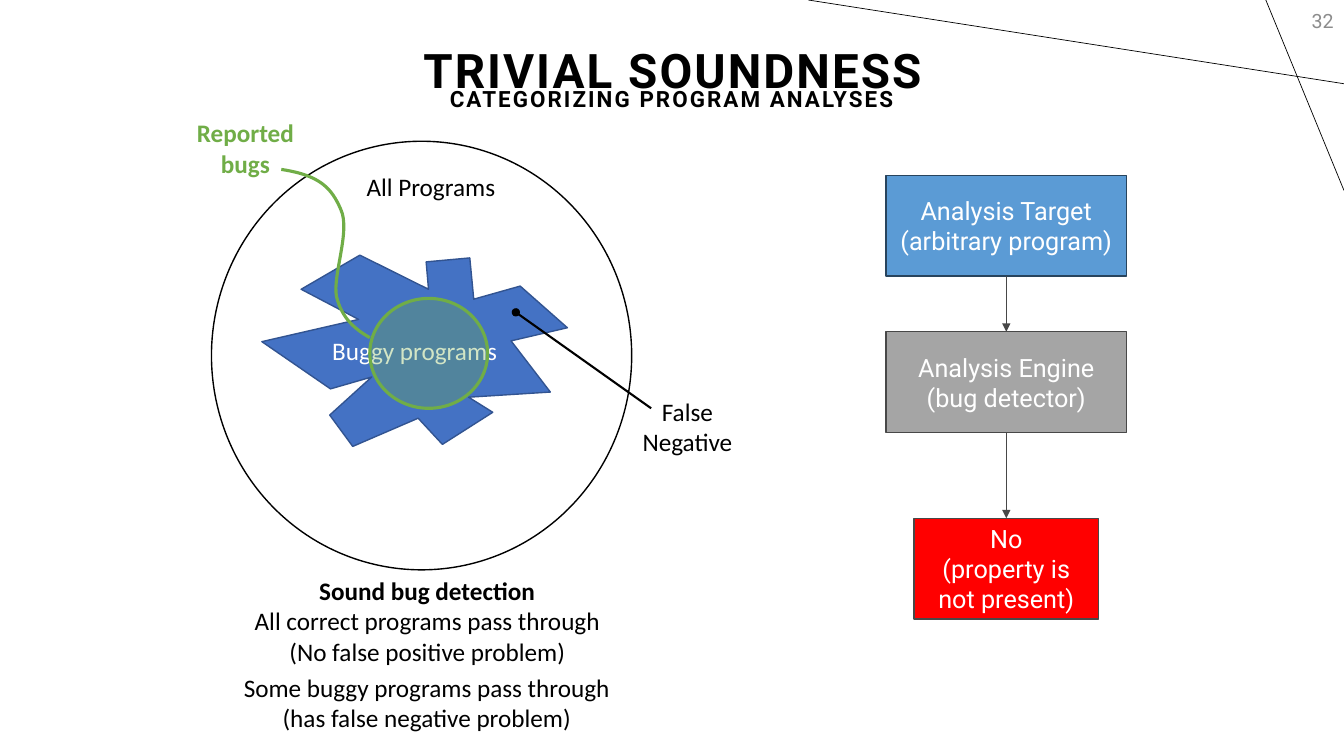
from pptx import Presentation
from pptx.dml.color import RGBColor
from pptx.enum.shapes import MSO_CONNECTOR, MSO_SHAPE
from pptx.enum.text import MSO_ANCHOR, MSO_AUTO_SIZE, PP_ALIGN
from pptx.oxml.ns import qn
from pptx.util import Cm, Pt
from lxml import etree

RECT, OVAL = MSO_SHAPE.RECTANGLE, MSO_SHAPE.OVAL
STRAIGHT = MSO_CONNECTOR.STRAIGHT
CENTER, RIGHT = PP_ALIGN.CENTER, PP_ALIGN.RIGHT
TOP, MIDDLE = MSO_ANCHOR.TOP, MSO_ANCHOR.MIDDLE
FIT = MSO_AUTO_SIZE.SHAPE_TO_FIT_TEXT
BOTTOM_SIDE, TOP_SIDE = 2, 0

BLACK = RGBColor(0x00, 0x00, 0x00)
WHITE = RGBColor(0xFF, 0xFF, 0xFF)
PAGE_GRAY = RGBColor(0x8C, 0x8C, 0x8C)
GREEN = RGBColor(0x70, 0xAD, 0x47)
BLUE = RGBColor(0x44, 0x72, 0xC4)
BLUE_EDGE = RGBColor(0x32, 0x54, 0x91)
SKY = RGBColor(0x5B, 0x9B, 0xD5)
SKY_EDGE = RGBColor(0x28, 0x44, 0x5D)
GRAY = RGBColor(0xA5, 0xA5, 0xA5)
DARK = RGBColor(0x48, 0x48, 0x48)
RED = RGBColor(0xFF, 0x00, 0x00)


class SlideBuilder:
    heading_font = "Roboto"
    body_font = "Calibri"
    size = 18

    def __init__(self, slide):
        self.s = slide

    def add_lines(self, tf, lines, color, font, size=None, bold=False,
                  align=CENTER, anchor=TOP, spc=None, spacing=None):
        tf.vertical_anchor = anchor
        for i, line in enumerate(lines):
            p = tf.add_paragraph() if i else tf.paragraphs[0]
            p.alignment = align
            if spacing:
                p.line_spacing = spacing
            r = p.add_run()
            r.text = line
            r.font.name = font
            r.font.size = Pt(size or self.size)
            r.font.bold = bold
            r.font.color.rgb = color
            if spc:
                r._r.get_or_add_rPr().set("spc", str(spc))

    def textbox(self, box, lines, color=BLACK, font=body_font, wrap=False, **style):
        tf = self.s.shapes.add_textbox(*map(Cm, box)).text_frame
        tf.word_wrap = wrap
        if not wrap:
            tf.auto_size = FIT
        self.add_lines(tf, lines, color, font, **style)

    def heading(self, box, text, size):
        self.textbox(box, [text], font=self.heading_font, wrap=True, size=size,
                     bold=True, anchor=MIDDLE, spc=150, spacing=0.9)

    def paint(self, sp, fill, edge, width=1.0, alpha=None):
        sp.shadow.inherit = False
        if fill is None:
            sp.fill.background()
        else:
            sp.fill.solid()
            sp.fill.fore_color.rgb = fill
        if alpha:
            clr = sp._element.spPr.find(qn("a:solidFill"))[0]
            etree.SubElement(clr, qn("a:alpha")).set("val", str(alpha * 1000))
        sp.line.color.rgb = edge
        sp.line.width = Pt(width)
        return sp

    def shape(self, kind, box, fill, edge, **look):
        sp = self.s.shapes.add_shape(kind, *map(Cm, box))
        return self.paint(sp, fill, edge, **look)

    def step(self, center, top, width, lines, fill, edge):
        sp = self.shape(RECT, (center - width / 2, top, width, 2.54), fill, edge)
        self.add_lines(sp.text_frame, lines, WHITE, self.heading_font, anchor=MIDDLE)
        return sp

    def outline(self, points, closed):
        emu = [(Cm(x), Cm(y)) for x, y in points]
        fb = self.s.shapes.build_freeform(*emu[0])
        fb.add_line_segments(emu[1:], close=closed)
        return fb.convert_to_shape()

    def curve(self, points, color, width):
        sp = self.paint(self.outline(points, False), None, color, width)
        # Every three points after the start form one cubic segment
        segments = list(sp._element.iter(qn("a:lnTo")))
        for i in range(0, len(segments), 3):
            bezier = etree.Element(qn("a:cubicBezTo"))
            segments[i].addprevious(bezier)
            for seg in segments[i:i + 3]:
                bezier.append(seg[0])
                seg.getparent().remove(seg)

    def line(self, start, end, color=BLACK, width=0.5, tail=None):
        c = self.s.shapes.add_connector(STRAIGHT, *map(Cm, start + end))
        c.line.color.rgb = color
        c.line.width = Pt(width)
        if tail:
            ln = c._element.spPr.find(qn("a:ln"))
            etree.SubElement(ln, qn("a:tailEnd")).set("type", tail)
        etree.SubElement(c._element.spPr, qn("a:effectLst"))
        return c

    def arrow(self, upper, lower):
        c = self.line((0, 0), (0, 0), DARK, 1, "triangle")
        c.begin_connect(upper, BOTTOM_SIDE)
        c.end_connect(lower, TOP_SIDE)


def main():
    prs = Presentation()
    prs.slide_width, prs.slide_height = Cm(33.87), Cm(19.05)
    b = SlideBuilder(prs.slides.add_slide(prs.slide_layouts[6]))

    # Corner lines, headings and page number
    b.line((33.87, 2.11), (20.37, 0))
    b.line((31.9, 0), (33.87, 4.8))
    b.heading((0.05, 0, 33.81, 3.68), "TRIVIAL SOUNDNESS", 34)
    b.textbox((26.24, 0, 7.62, 1.02), ["32"], PAGE_GRAY, b.heading_font, wrap=True,
              size=14, align=RIGHT, anchor=MIDDLE)
    b.heading((0.03, 0.69, 33.81, 3.68), "CATEGORIZING PROGRAM ANALYSES", 16)

    # Set of all programs with the buggy ones inside
    b.shape(OVAL, (5.33, 3.56, 10.59, 10.8), WHITE, BLACK)
    b.textbox((8.97, 4.19, 3.78, 1.02), ["All Programs"])
    buggy = b.outline([
        (10.8, 7.29), (9.07, 6.43), (7.59, 7.29), (9.04, 8.05), (6.6, 8.61),
        (8.33, 9.8), (9.37, 9.5), (8.31, 10.46), (8.89, 11.25), (10.54, 10.54),
        (11.15, 11.2), (12.42, 10.39), (11.81, 10.01), (13.87, 9.88), (12.88, 8.59),
        (14.3, 8.26), (13.11, 7.21), (11.94, 7.54), (11.84, 6.5), (10.74, 6.6)], True)
    b.paint(buggy, BLUE, BLUE_EDGE)
    b.add_lines(buggy.text_frame, ["Buggy programs"], WHITE, b.body_font, anchor=MIDDLE)

    # Reported bugs
    b.shape(OVAL, (9.32, 7.52, 2.97, 2.77), GREEN, GREEN, width=2.25, alpha=31)
    b.textbox((4.7, 2.84, 2.97, 1.8), ["Reported", "bugs"], GREEN, bold=True)
    b.curve([(7.09, 4.27), (8.08, 4.42), (8.36, 4.75), (8.59, 5.28),
             (8.84, 5.82), (8.38, 6.93), (8.48, 7.47),
             (8.61, 8), (8.92, 8.28), (9.32, 8.51)], GREEN, 2.25)

    # False negative callout
    b.line((16.41, 10.29), (13, 7.87), width=1.5, tail="oval")
    b.textbox((15.93, 9.86, 2.79, 1.8), ["False", "Negative"])

    # Caption
    b.textbox((7.77, 14.38, 5.99, 1.02), ["Sound bug detection"], bold=True)
    b.textbox((6.12, 15.14, 9.3, 1.8),
              ["All correct programs pass through", "(No false positive problem)"])
    b.textbox((5.84, 16.81, 9.83, 1.8),
              ["Some buggy programs pass through", "(has false negative problem)"])

    # Analysis flow
    center = 25.36
    target = b.step(center, 4.42, 6.07, ["Analysis Target", "(arbitrary program)"],
                    SKY, SKY_EDGE)
    engine = b.step(center, 8.36, 6.07, ["Analysis Engine", "(bug detector)"], GRAY, DARK)
    answer = b.step(center, 13.06, 4.65, ["No", "(property is not present)"], RED, DARK)
    b.arrow(target, engine)
    b.arrow(engine, answer)

    prs.save("out.pptx")


if __name__ == "__main__":
    main()
